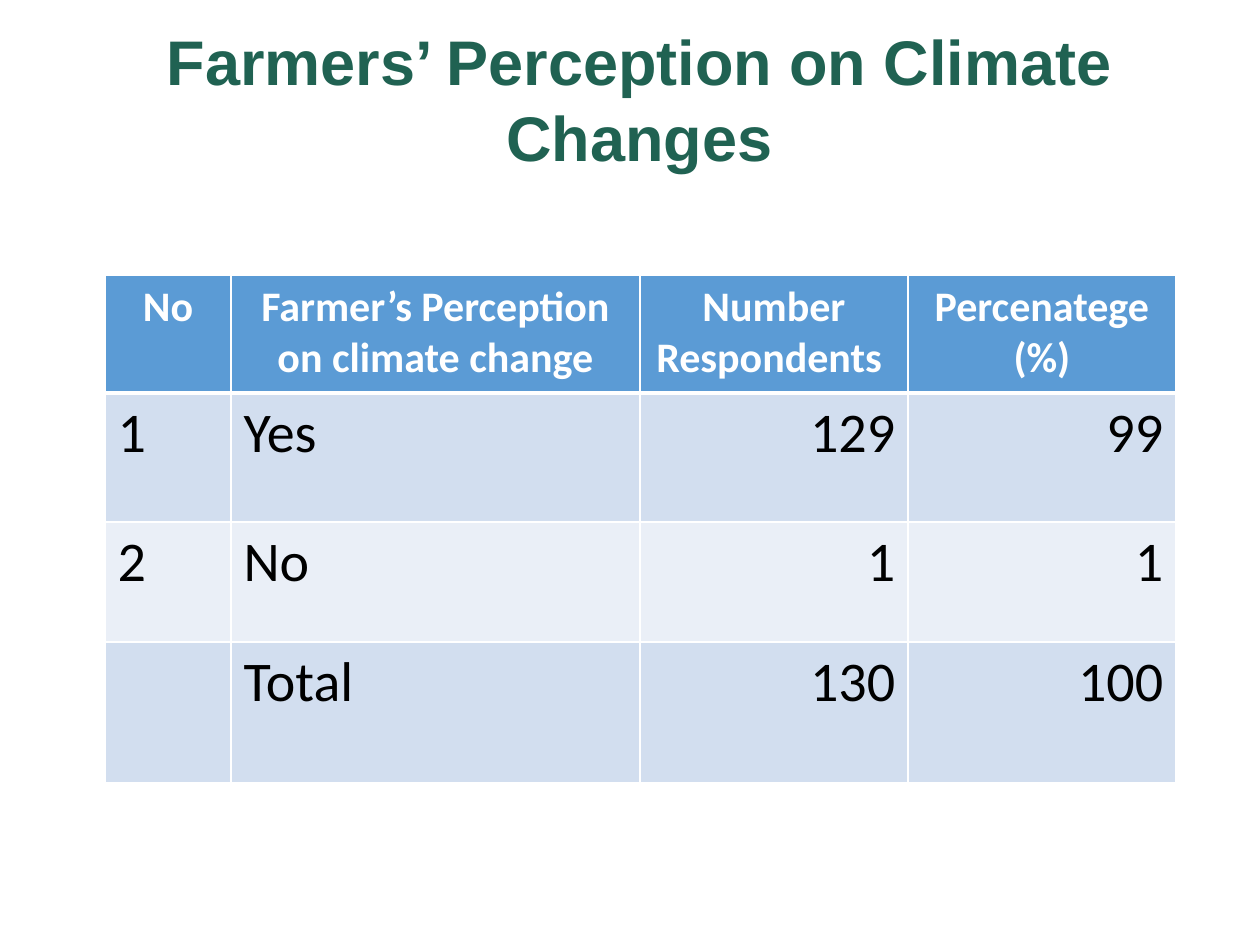
import pptx
import pptx.util
import pptx.dml.color
import pptx.enum.text
import pptx.oxml.ns
import lxml.etree

PX = 914400 // 126
ALIGN = pptx.enum.text.PP_ALIGN
THEME = {
    "title": {"name": "Arial", "size": 36, "bold": True, "color": "206252"},
    "head": {"name": "Calibri", "size": 24, "bold": True, "color": "FFFFFF"},
    "body": {"name": "Calibri", "size": 32, "bold": False, "color": "000000"},
    "fills": ["5B9BD5", "D2DEEF", "EAEFF7"],
    "rule": "FFFFFF",
}


def write(frame, text, style, align):
    frame.text = text
    for para in frame.paragraphs:
        para.alignment = align
        for key, value in THEME[style].items():
            if key == "color":
                para.font.color.rgb = pptx.dml.color.RGBColor.from_string(value)
            elif key == "size":
                para.font.size = pptx.util.Pt(value)
            else:
                setattr(para.font, key, value)
        # Runs carry the same format as their paragraph
        for run in para.runs:
            for key in ("name", "size", "bold"):
                setattr(run.font, key, getattr(para.font, key))
            run.font.color.rgb = para.font.color.rgb


def edge(cell, side, width):
    tag = pptx.oxml.ns.qn
    props = cell._tc.get_or_add_tcPr()
    line = lxml.etree.SubElement(props, tag("a:ln" + side), w=str(pptx.util.Pt(width)))
    fill = lxml.etree.SubElement(line, tag("a:solidFill"))
    lxml.etree.SubElement(fill, tag("a:srgbClr"), val=THEME["rule"])


deck = pptx.Presentation()
deck.slide_width = 1260 * PX
deck.slide_height = 945 * PX
slide = deck.slides.add_slide(deck.slide_layouts[6])

# Title
box = slide.shapes.add_textbox(94 * PX, 35 * PX, 1091 * PX, 145 * PX)
frame = box.text_frame
frame.word_wrap = True
frame.vertical_anchor = pptx.enum.text.MSO_ANCHOR.BOTTOM
write(frame, "Farmers’ Perception on Climate Changes", "title", ALIGN.CENTER)

# Survey table
rows = [
    ["No", "Farmer’s Perception\non climate change", "Number Respondents ", "Percenatege\n(%)"],
    ["1", "Yes", "129", "99"],
    ["2", "No", "1", "1"],
    ["", "Total", "130", "100"],
]
wide = [126, 409, 268, 268]
high = [118, 129, 120, 141]
table = slide.shapes.add_table(
    len(rows), len(wide), 105 * PX, 275 * PX, sum(wide) * PX, sum(high) * PX
).table
for col, width in zip(table.columns, wide):
    col.width = width * PX
for row, height in zip(table.rows, high):
    row.height = height * PX

# Cells: header on top, then two fills by turns
for r, texts in enumerate(rows):
    shade = THEME["fills"][0 if r == 0 else 2 - r % 2]
    for c, text in enumerate(texts):
        cell = table.cell(r, c)
        if r == 0:
            write(cell.text_frame, text, "head", ALIGN.CENTER)
        else:
            write(cell.text_frame, text, "body", ALIGN.RIGHT if c > 1 else ALIGN.LEFT)
        # The rule below the header is thick
        for side in "LRTB":
            edge(cell, side, 3 if (r, side) in ((0, "B"), (1, "T")) else 1)
        cell.fill.solid()
        cell.fill.fore_color.rgb = pptx.dml.color.RGBColor.from_string(shade)

deck.save("out.pptx")
